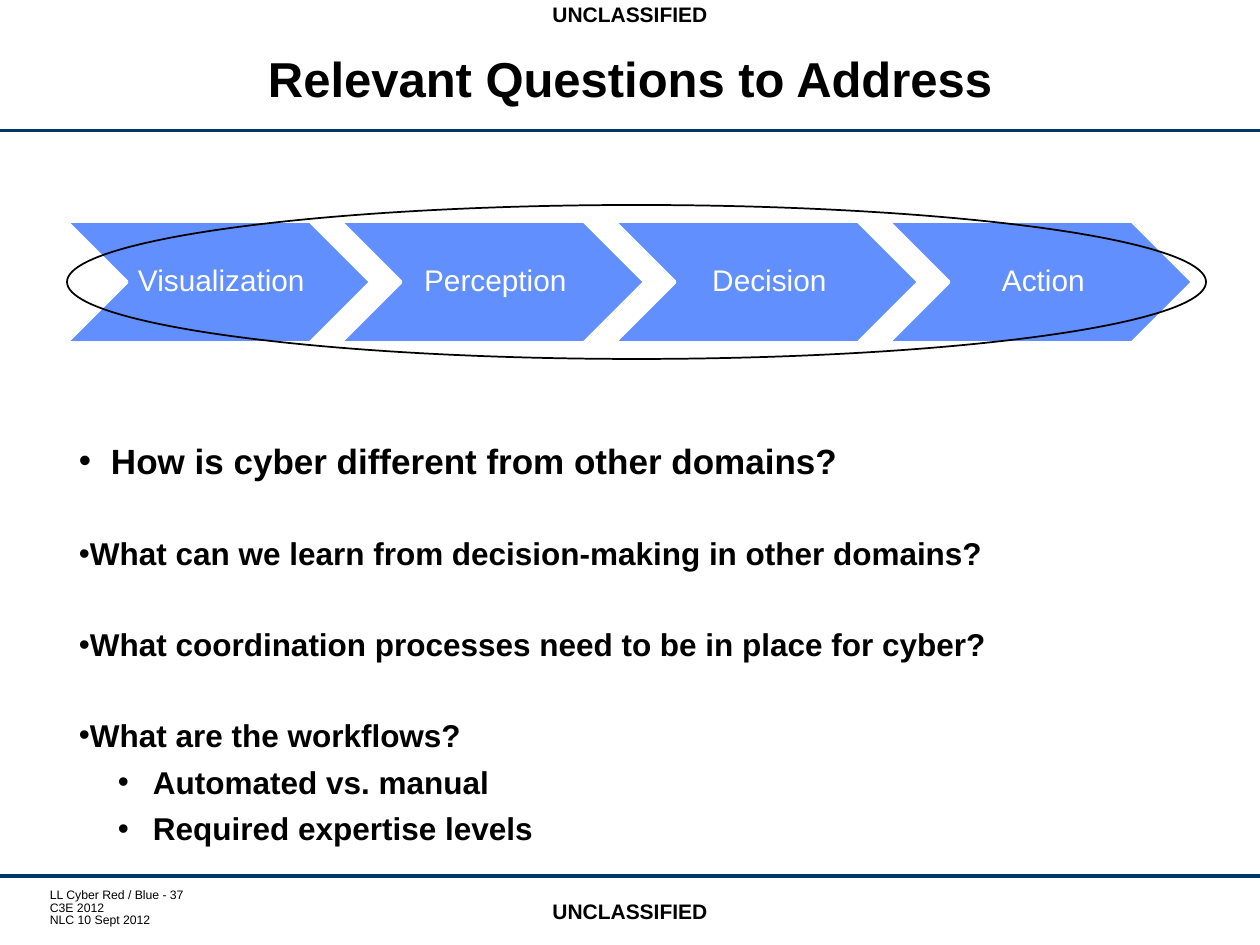
from lxml import etree
from pptx import Presentation
from pptx import util as u
from pptx.dml.color import RGBColor
from pptx.enum import shapes, text
from pptx.oxml.ns import qn

PX = 914400 / 126
FONT = "Arial"
BLACK = RGBColor(0x00, 0x00, 0x00)
WHITE = RGBColor(0xFF, 0xFF, 0xFF)
NAVY = RGBColor(0x00, 0x37, 0x67)
BLUE = RGBColor(0x61, 0x8F, 0xFD)
CENTER = text.PP_ALIGN.CENTER

STAGES = ["Visualization", "Perception", "Decision", "Action"]

# Text, size, space before (pt), text indent and hanging bullet width (px)
QUESTIONS = [
    ("How is cyber different from other domains?", 20, 0, 32, 32),
    ("What can we learn from decision-making in other domains?", 18, 30.4, 11, 11),
    ("What coordination processes need to be in place for cyber?", 18, 30.4, 11, 11),
    ("What are the workflows?", 18, 30.4, 11, 11),
    ("Automated vs. manual", 18, 5, 74, 35),
    ("Required expertise levels", 18, 5, 74, 35),
]


def px(length):
    return u.Emu(round(length * PX))


def box(*lengths):
    return [px(length) for length in lengths]


def set_frame(frame, margins, anchor, wrap=True):
    frame.word_wrap = wrap
    frame.vertical_anchor = anchor
    (frame.margin_left, frame.margin_top,
     frame.margin_right, frame.margin_bottom) = box(*margins)


def add_run(paragraph, words, size, color=BLACK, bold=False):
    run = paragraph.add_run()
    run.text = words
    run.font.name = FONT
    run.font.size = u.Pt(size)
    run.font.bold = bold
    run.font.color.rgb = color


def add_text_box(slide, place, margins=(13, 6, 13, 6), anchor=text.MSO_ANCHOR.MIDDLE):
    frame = slide.shapes.add_textbox(*box(*place)).text_frame
    set_frame(frame, margins, anchor)
    return frame


def add_heading(slide, place, words, size):
    paragraph = add_text_box(slide, place).paragraphs[0]
    paragraph.alignment = CENTER
    add_run(paragraph, words, size, bold=True)


def add_rule(slide, y):
    rule = slide.shapes.add_connector(
        shapes.MSO_CONNECTOR.STRAIGHT, *box(0, y, 1260, y))
    rule.line.color.rgb = NAVY
    rule.line.width = u.Pt(1.75)
    etree.SubElement(rule._element.spPr, qn("a:effectLst"))


def add_outlined(slide, kind, place, line_color, line_width, fill=None):
    shape = slide.shapes.add_shape(kind, *box(*place))
    shape.shadow.inherit = False
    if fill is None:
        shape.fill.background()
    else:
        shape.fill.solid()
        shape.fill.fore_color.rgb = fill
    shape.line.color.rgb = line_color
    shape.line.width = u.Pt(line_width)
    return shape


def add_stage(slide, left, label):
    stage = add_outlined(slide, shapes.MSO_SHAPE.CHEVRON,
                         (left, 221, 305, 122), WHITE, 2, BLUE)
    set_frame(stage.text_frame, (9, 3, 3, 3), text.MSO_ANCHOR.MIDDLE, wrap=False)
    paragraph = stage.text_frame.paragraphs[0]
    paragraph.alignment = CENTER
    paragraph.line_spacing = 0.9
    add_run(paragraph, label, 17, WHITE)


def add_questions(slide):
    frame = add_text_box(slide, (66, 433, 1129, 410), anchor=text.MSO_ANCHOR.TOP)
    for index, (words, size, before, indent, hanging) in enumerate(QUESTIONS):
        paragraph = frame.add_paragraph() if index else frame.paragraphs[0]
        properties = paragraph._p.get_or_add_pPr()
        properties.set("marL", str(px(indent)))
        properties.set("indent", str(-px(hanging)))
        etree.SubElement(properties, qn("a:buFont"), typeface=FONT)
        etree.SubElement(properties, qn("a:buChar"), char="•")
        if before:
            paragraph.space_before = u.Pt(before)
        add_run(paragraph, words, size, bold=True)


def add_source_note(slide):
    frame = add_text_box(slide, (44, 890, 302, 40), (6, 0, 0, 0), text.MSO_ANCHOR.TOP)
    first, second = frame.paragraphs[0], frame.add_paragraph()
    add_run(first, "LL Cyber Red / Blue - 37", 7)
    first.add_line_break()
    add_run(first, "C3E 2012", 7)
    add_run(second, "NLC 10 Sept 2012", 7)
    for paragraph in (first, second):
        paragraph.line_spacing = u.Pt(7)


def main():
    deck = Presentation()
    deck.slide_width, deck.slide_height = box(1260, 945)
    slide = deck.slides.add_slide(deck.slide_layouts[6])

    # Header and footer
    for y in (131, 876):
        add_rule(slide, y)
    for y in (0, 897):
        add_heading(slide, (399, y, 462, 28), "UNCLASSIFIED", 12)
    add_source_note(slide)
    add_heading(slide, (130, 29, 1000, 98), "Relevant Questions to Address", 28)

    # Process chain, with the ellipse around all stages
    for index, label in enumerate(STAGES):
        add_stage(slide, 66 + 274 * index, label)
    add_questions(slide)
    add_outlined(slide, shapes.MSO_SHAPE.OVAL, (67, 205, 1139, 154), BLACK, 1)

    deck.save("out.pptx")


if __name__ == "__main__":
    main()
